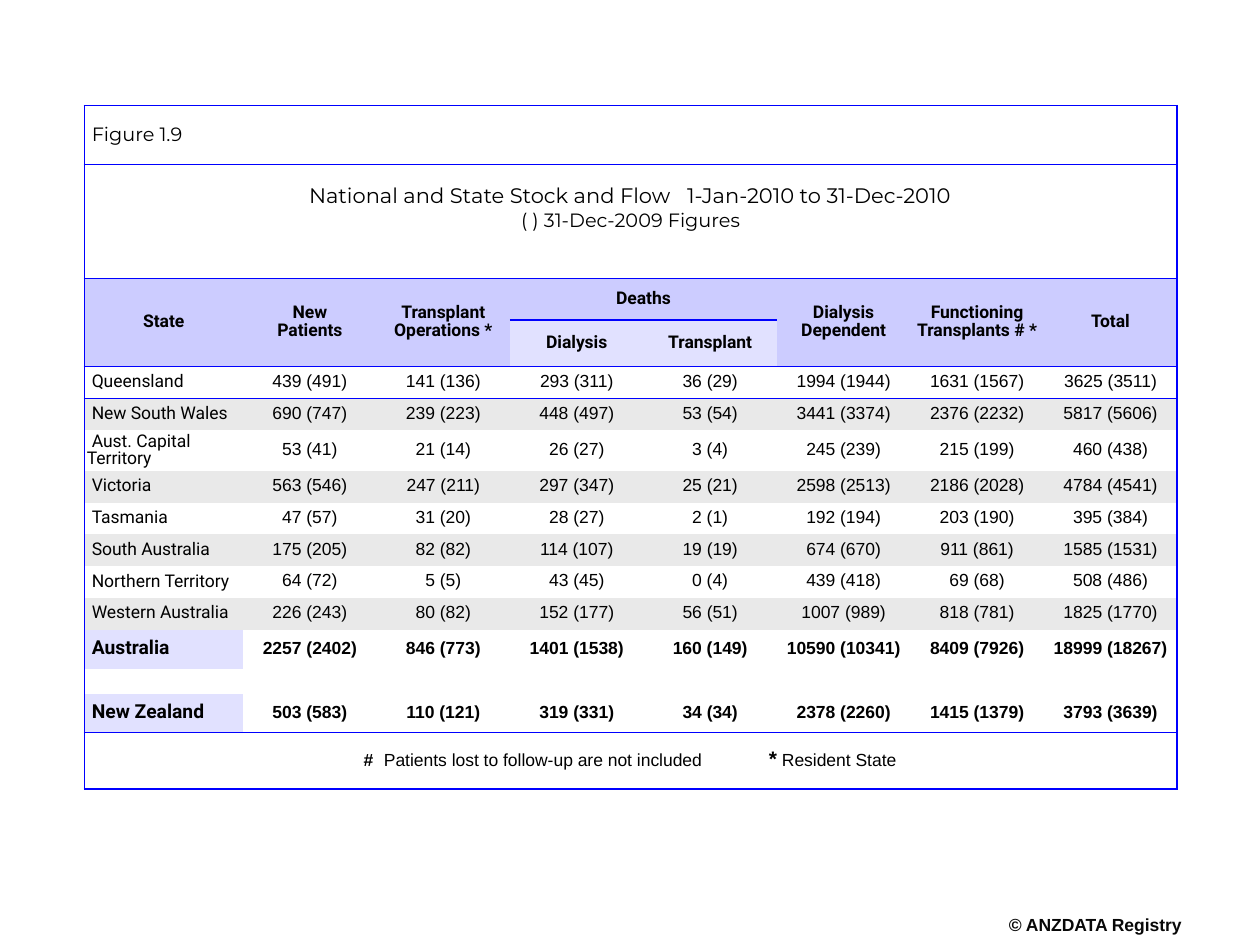
from dataclasses import dataclass

from lxml.etree import SubElement
from pptx import Presentation
from pptx.dml.color import RGBColor
from pptx.enum.text import MSO_ANCHOR as Anchor, PP_ALIGN as Align
from pptx.oxml.ns import qn
from pptx.util import Cm, Pt


@dataclass(frozen=True)
class Theme:
    ink: str = "000000"
    credit: str = "080808"
    line: str = "0000FF"
    header: str = "CCCCFF"
    pale: str = "E1E1FF"
    band: str = "E9E9E9"
    title_font: str = "Montserrat"
    label_font: str = "Roboto"
    body_font: str = "Arial"
    title: float = 12
    subtitle: float = 11
    body: float = 10
    spacer: float = 8
    leading: float = 0.85
    thin: float = 0.75
    rule: float = 1


THEME = Theme()
NO_STYLE = "{2D5ABB26-0587-4C30-8999-92F81FD0307C}"
COL_WIDTHS = [3.2] + [2.69] * 7
ROW_HEIGHTS = [1.19, 2.29, 0.84, 0.94] + [0.64] * 8 + [0.79, 0.5, 0.79, 1.14]
FIRST_DATA, SPACER, NOTES = 4, 13, 15
LAST_COL = len(COL_WIDTHS) - 1
DEATHS = (3, 4)
RULES_BELOW = {-1: THEME.rule, 0: THEME.rule, 1: THEME.rule, 3: THEME.rule,
               14: THEME.thin, 15: THEME.rule}
HEADERS = {0: ["State"], 1: ["New", "Patients"], 2: ["Transplant", "Operations *"],
           3: ["Deaths"], 5: ["Dialysis", "Dependent"],
           6: ["Functioning", "Transplants # *"], 7: ["Total"]}
STATES = [
    ("Queensland", "439 (491)", "141 (136)", "293 (311)", "36 (29)", "1994 (1944)", "1631 (1567)", "3625 (3511)"),
    ("New South Wales", "690 (747)", "239 (223)", "448 (497)", "53 (54)", "3441 (3374)", "2376 (2232)", "5817 (5606)"),
    ("Aust. Capital Territory", "53 (41)", "21 (14)", "26 (27)", "3 (4)", "245 (239)", "215 (199)", "460 (438)"),
    ("Victoria", "563 (546)", "247 (211)", "297 (347)", "25 (21)", "2598 (2513)", "2186 (2028)", "4784 (4541)"),
    ("Tasmania", "47 (57)", "31 (20)", "28 (27)", "2 (1)", "192 (194)", "203 (190)", "395 (384)"),
    ("South Australia", "175 (205)", "82 (82)", "114 (107)", "19 (19)", "674 (670)", "911 (861)", "1585 (1531)"),
    ("Northern Territory", "64 (72)", "5 (5)", "43 (45)", "0 (4)", "439 (418)", "69 (68)", "508 (486)"),
    ("Western Australia", "226 (243)", "80 (82)", "152 (177)", "56 (51)", "1007 (989)", "818 (781)", "1825 (1770)"),
]
COUNTRIES = {
    12: ("Australia", "2257 (2402)", "846 (773)", "1401 (1538)", "160 (149)", "10590 (10341)", "8409 (7926)", "18999 (18267)"),
    14: ("New Zealand", "503 (583)", "110 (121)", "319 (331)", "34 (34)", "2378 (2260)", "1415 (1379)", "3793 (3639)"),
}


def add_run(p, text, font=THEME.body_font, size=THEME.body, bold=False, color=THEME.ink):
    r = p.add_run()
    r.text = text
    r.font.name, r.font.size, r.font.bold = font, Pt(size), bold
    r.font.color.rgb = RGBColor.from_string(color)


def set_paragraph(p, align=Align.CENTER, indent=0, tabs=()):
    p.alignment = align
    p.line_spacing = THEME.leading
    pPr = p._p.get_or_add_pPr()
    if indent:
        pPr.set("marL", "0")
        pPr.set("indent", str(Cm(indent)))
    if tabs:
        stops = SubElement(pPr, qn("a:tabLst"))
        for pos in tabs:
            SubElement(stops, qn("a:tab"), pos=str(Cm(pos)), algn="l")
    return p


def set_label(cell, text, size=THEME.body, bold=False, font=THEME.label_font):
    p = set_paragraph(cell.text_frame.paragraphs[0], Align.LEFT, indent=0.1)
    add_run(p, text, font, size, bold)


def set_header(cell, lines):
    tf = cell.text_frame
    for i, line in enumerate(lines):
        p = tf.add_paragraph() if i else tf.paragraphs[0]
        add_run(set_paragraph(p), line, THEME.label_font, bold=True)


def set_row(table, row, values, size=THEME.body, bold=False):
    set_label(table.cell(row, 0), values[0], size, bold)
    for col, value in enumerate(values[1:], 1):
        p = set_paragraph(table.cell(row, col).text_frame.paragraphs[0])
        add_run(p, value, bold=bold)


def rule_below(row, col):
    if row == 2 and col in DEATHS:
        return THEME.thin
    return RULES_BELOW.get(row)


def fill_color(row, col):
    if row in (2, 3):
        return THEME.pale if row == 3 and col in DEATHS else THEME.header
    if row in COUNTRIES and col == 0:
        return THEME.pale
    if FIRST_DATA <= row < FIRST_DATA + len(STATES) and row % 2:
        return THEME.band
    return None


def style_cell(cell, row, col):
    bottom, right = row, col
    if cell.is_merge_origin:
        bottom += cell.span_height - 1
        right += cell.span_width - 1
    edges = {"L": THEME.rule if col == 0 else None,
             "R": THEME.rule if right == LAST_COL else None,
             "T": rule_below(row - 1, col),
             "B": rule_below(bottom, col)}
    if cell.is_spanned and row == 3:
        edges["T"] = None
    tcPr = cell._tc.get_or_add_tcPr()
    for side, width in edges.items():
        if width:
            ln = SubElement(tcPr, qn(f"a:ln{side}"), w=str(Pt(width)))
            SubElement(SubElement(ln, qn("a:solidFill")), qn("a:srgbClr"), val=THEME.line)
    cell.vertical_anchor = Anchor.MIDDLE
    cell.margin_left = cell.margin_right = Cm(0.05)
    cell.margin_top = cell.margin_bottom = Cm(0.05)
    color = fill_color(row, col)
    if color:
        cell.fill.solid()
        cell.fill.fore_color.rgb = RGBColor.from_string(color)
    else:
        cell.fill.background()


def set_title(cell):
    tf = cell.text_frame
    p = set_paragraph(tf.paragraphs[0], Align.LEFT, tabs=(4.48, 12.1))
    add_run(p, "\tNational and State Stock and Flow\t1-Jan-2010 to 31-Dec-2010",
            THEME.title_font, THEME.title)
    p = set_paragraph(tf.add_paragraph())
    p.space_before = Pt(2)
    add_run(p, "( ) 31-Dec-2009 Figures", THEME.title_font, THEME.subtitle)
    cell.margin_bottom = Cm(0.56)


def set_notes(cell):
    p = set_paragraph(cell.text_frame.paragraphs[0], Align.LEFT, tabs=(5.58, 5.99, 13.75))
    add_run(p, "\t#", bold=True)
    add_run(p, "\tPatients lost to follow-up are not included")
    add_run(p, "\t*", size=THEME.title, bold=True)
    add_run(p, " Resident State")


def add_stock_table(slide, left, top, width, height):
    sp = slide.shapes.add_table(len(ROW_HEIGHTS), len(COL_WIDTHS),
                                Cm(left), Cm(top), Cm(width), Cm(height))
    table = sp.table
    table.first_row = table.horz_banding = False
    table._tbl.tblPr.find(qn("a:tableStyleId")).text = NO_STYLE
    for column, size in zip(table.columns, COL_WIDTHS):
        column.width = Cm(size)
    for row, size in zip(table.rows, ROW_HEIGHTS):
        row.height = Cm(size)
    for row in (0, 1, NOTES):
        table.cell(row, 0).merge(table.cell(row, LAST_COL))
    for col in HEADERS:
        end = (2, DEATHS[1]) if col == DEATHS[0] else (3, col)
        table.cell(2, col).merge(table.cell(*end))
    for row in range(len(ROW_HEIGHTS)):
        for col in range(len(COL_WIDTHS)):
            style_cell(table.cell(row, col), row, col)

    set_label(table.cell(0, 0), "Figure 1.9", THEME.subtitle, font=THEME.title_font)
    set_title(table.cell(1, 0))
    for col, lines in HEADERS.items():
        set_header(table.cell(2, col), lines)
    for col, name in zip(DEATHS, ("Dialysis", "Transplant")):
        set_header(table.cell(3, col), [name])
    for row, values in enumerate(STATES, FIRST_DATA):
        set_row(table, row, values)
    for row, values in COUNTRIES.items():
        set_row(table, row, values, THEME.subtitle, True)
    for cell in table.rows[SPACER].cells:
        p = cell.text_frame.paragraphs[0]
        SubElement(p._p, qn("a:endParaRPr"), sz=str(int(THEME.spacer * 100)))
    set_notes(table.cell(NOTES, 0))


def add_credit(slide, left, top, width, height):
    tf = slide.shapes.add_textbox(Cm(left), Cm(top), Cm(width), Cm(height)).text_frame
    tf.word_wrap = False
    tf.margin_left = tf.margin_right = tf.margin_top = tf.margin_bottom = 0
    add_run(set_paragraph(tf.paragraphs[0]), "© ANZDATA Registry", bold=True, color=THEME.credit)


def main():
    prs = Presentation()
    prs.slide_width, prs.slide_height = Cm(25.4), Cm(19.05)
    slide = prs.slides.add_slide(prs.slide_layouts[6])
    add_credit(slide, 20.29, 18.49, 3.58, 0.43)
    add_stock_table(slide, 1.7, 2.13, sum(COL_WIDTHS), sum(ROW_HEIGHTS))
    prs.save("out.pptx")


if __name__ == "__main__":
    main()
